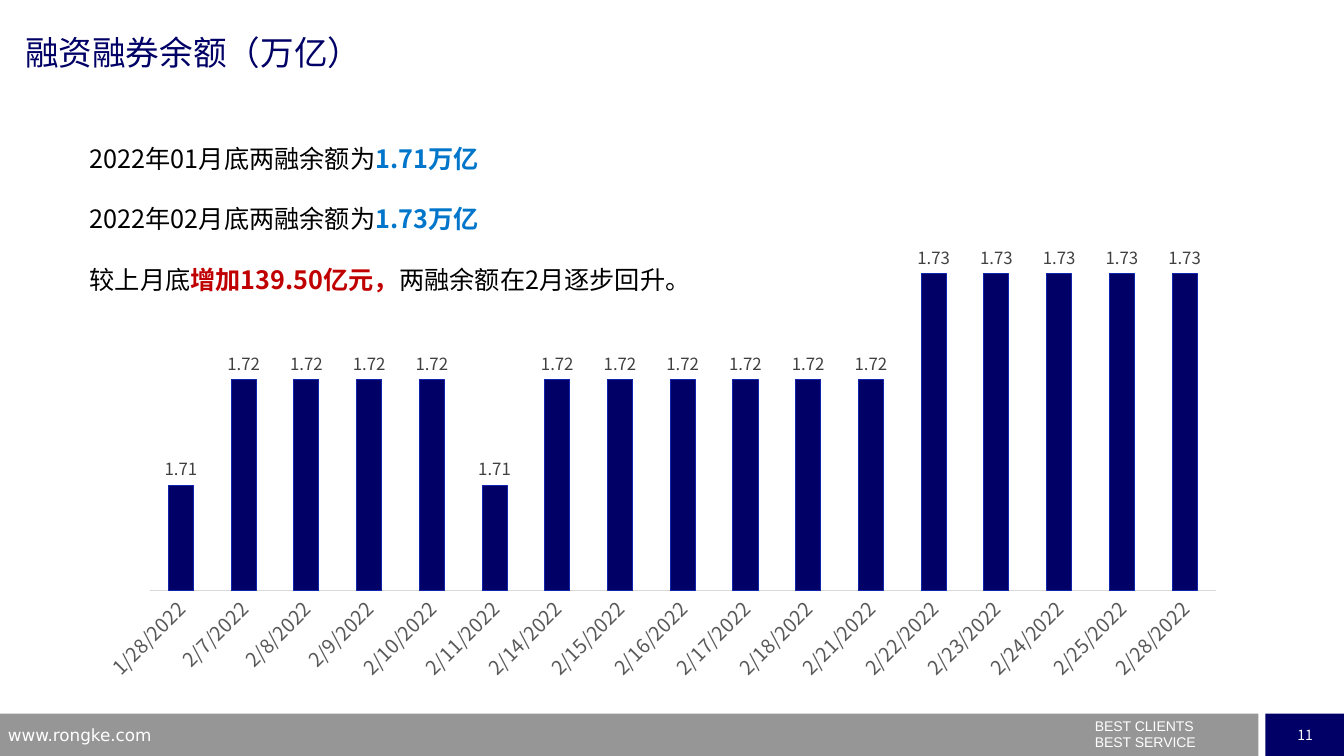
from lxml import etree
from pptx import Presentation
from pptx.chart.data import CategoryChartData
from pptx.dml.color import RGBColor
from pptx.enum.chart import XL_CHART_TYPE as ChartType, XL_LABEL_POSITION as LabelPosition
from pptx.enum.chart import XL_TICK_MARK as TickMark
from pptx.enum.shapes import MSO_SHAPE as Shape
from pptx.enum.text import MSO_ANCHOR as Anchor, PP_ALIGN as Align
from pptx.oxml import parse_xml
from pptx.oxml.ns import nsdecls, qn
from pptx.util import Pt

PX = 9144  # 100 px to the inch
CJK = "Noto Sans CJK SC"
NAVY, GRAY, WHITE, BLACK = "000066", "969696", "FFFFFF", "000000"
BLUE, RED = "0076CB", "C00000"


def color(hex_value):
    return RGBColor.from_string(hex_value)


def write(frame, lines, size, font, inset=None):
    """Fill a text frame; each line is a list of (text, colour, bold)."""
    if inset is not None:
        frame.margin_left = frame.margin_top = inset
        frame.margin_right = frame.margin_bottom = inset
    for number, line in enumerate(lines):
        para = frame.add_paragraph() if number else frame.paragraphs[0]
        for text, hex_value, bold in line:
            span = para.add_run()
            span.text = text
            span.font.size = Pt(size)
            span.font.name = font
            span.font.bold = bold
            span.font.color.rgb = color(hex_value)
            east_asian = etree.SubElement(span.font._element, qn("a:ea"))
            east_asian.set("typeface", font)


deck = Presentation()
deck.slide_width, deck.slide_height = 1333 * PX, 750 * PX
page = deck.slides.add_slide(deck.slide_layouts[6])

# Footer
footer = []
for left, width, fill in [(0, 1248, GRAY), (1255, 79, NAVY)]:
    bar = page.shapes.add_shape(Shape.RECTANGLE, left * PX, 708 * PX, width * PX, 42 * PX)
    bar.shadow.inherit = False
    bar.fill.solid()
    bar.fill.fore_color.rgb = color(fill)
    bar.line.fill.background()
    footer.append(bar)
number_frame = footer[1].text_frame
number_frame.word_wrap = False
number_frame.vertical_anchor = Anchor.MIDDLE
write(number_frame, [[("11", WHITE, False)]], 10, CJK)
number_frame.paragraphs[0].alignment = Align.CENTER

slogan = page.shapes.add_textbox(1076 * PX, 714 * PX, 256 * PX, 36 * PX).text_frame
slogan.word_wrap = True
write(slogan, [[("BEST CLIENTS", WHITE, False)], [("BEST SERVICE", WHITE, False)]], 10, "Arial")
for para in slogan.paragraphs:
    para.line_spacing = 0.5
slogan.paragraphs[1].space_before = Pt(5.5)

website = page.shapes.add_textbox(-2 * PX, 714 * PX, 322 * PX, 26 * PX).text_frame
website.word_wrap = True
write(website, [[("www.rongke.com", WHITE, False)]], 12, "DejaVu Sans")

# Daily balances, newest first; the reversed axis shows them oldest first
balances = {
    "2/28/2022": 1.73, "2/25/2022": 1.73, "2/24/2022": 1.73, "2/23/2022": 1.73,
    "2/22/2022": 1.73, "2/21/2022": 1.72, "2/18/2022": 1.72, "2/17/2022": 1.72,
    "2/16/2022": 1.72, "2/15/2022": 1.72, "2/14/2022": 1.72, "2/11/2022": 1.71,
    "2/10/2022": 1.72, "2/9/2022": 1.72, "2/8/2022": 1.72, "2/7/2022": 1.72,
    "1/28/2022": 1.71,
}
data = CategoryChartData(number_format="0.00")
data.categories = list(balances)
data.add_series("Series 1", list(balances.values()))
chart = page.shapes.add_chart(ChartType.COLUMN_CLUSTERED, 43 * PX, 167 * PX,
                              1240 * PX, 540 * PX, data).chart
chart.has_legend = False
chart.has_title = False
chart.font.name = CJK
chart.font.size = Pt(10)
chart.font.color.rgb = color(BLACK)

dates = chart.category_axis
dates.reverse_order = True
dates.major_tick_mark = dates.minor_tick_mark = TickMark.NONE
dates.format.line.color.rgb = color("D9D9D9")
dates.format.line.width = Pt(0.75)
date_font = dates.tick_labels.font
date_font.name = CJK
date_font.size = Pt(14)
date_font.color.rgb = color("595959")
dates._element.find(qn("c:txPr")).find(qn("a:bodyPr")).set("rot", "-2700000")

amounts = chart.value_axis
amounts.visible = False
amounts.has_major_gridlines = False
amounts.minimum_scale, amounts.maximum_scale, amounts.major_unit = 1.7, 1.74, 0.01

plot = chart.plots[0]
plot.gap_width = 150
plot.vary_by_categories = False
columns = plot.series[0].format
columns.fill.solid()
columns.fill.fore_color.rgb = color(NAVY)
columns.line.color.rgb = color("1225AF")
columns.line.width = Pt(0.75)

plot.has_data_labels = True
labels = plot.data_labels
labels.show_value = True
labels.number_format = "0.00"
labels.number_format_is_linked = False
labels.position = LabelPosition.OUTSIDE_END
labels.font.name = CJK
labels.font.size = Pt(12)
labels.font.color.rgb = color("404040")

plot_area = chart._chartSpace.chart.plotArea
for old_layout in plot_area.findall(qn("c:layout")):
    plot_area.remove(old_layout)
plot_area.insert(0, parse_xml(
    f'<c:layout {nsdecls("c")}><c:manualLayout><c:layoutTarget val="inner"/>'
    '<c:xMode val="edge"/><c:yMode val="edge"/><c:x val="0.085"/><c:y val="0"/>'
    '<c:w val="0.853"/><c:h val="0.776"/></c:manualLayout></c:layout>'))

# Title and summary
title = page.shapes.add_textbox(25 * PX, 32 * PX, 900 * PX, 51 * PX).text_frame
title.word_wrap = True
write(title, [[("融资融券余额（万亿）", NAVY, False)]], 24, CJK, inset=0)

summary = page.shapes.add_textbox(89 * PX, 112 * PX, 648 * PX, 173 * PX).text_frame
summary.word_wrap = True
write(summary, [
    [("2022年01月底两融余额为", BLACK, False), ("1.71万亿", BLUE, True)],
    [("2022年02月底两融余额为", BLACK, False), ("1.73万亿", BLUE, True)],
    [("较上月底", BLACK, False), ("增加139.50亿元，", RED, True),
     ("两融余额在2月逐步回升。", BLACK, False)],
], 18, CJK, inset=0)
for para in summary.paragraphs:
    para.line_spacing = 2.0

deck.save("out.pptx")
